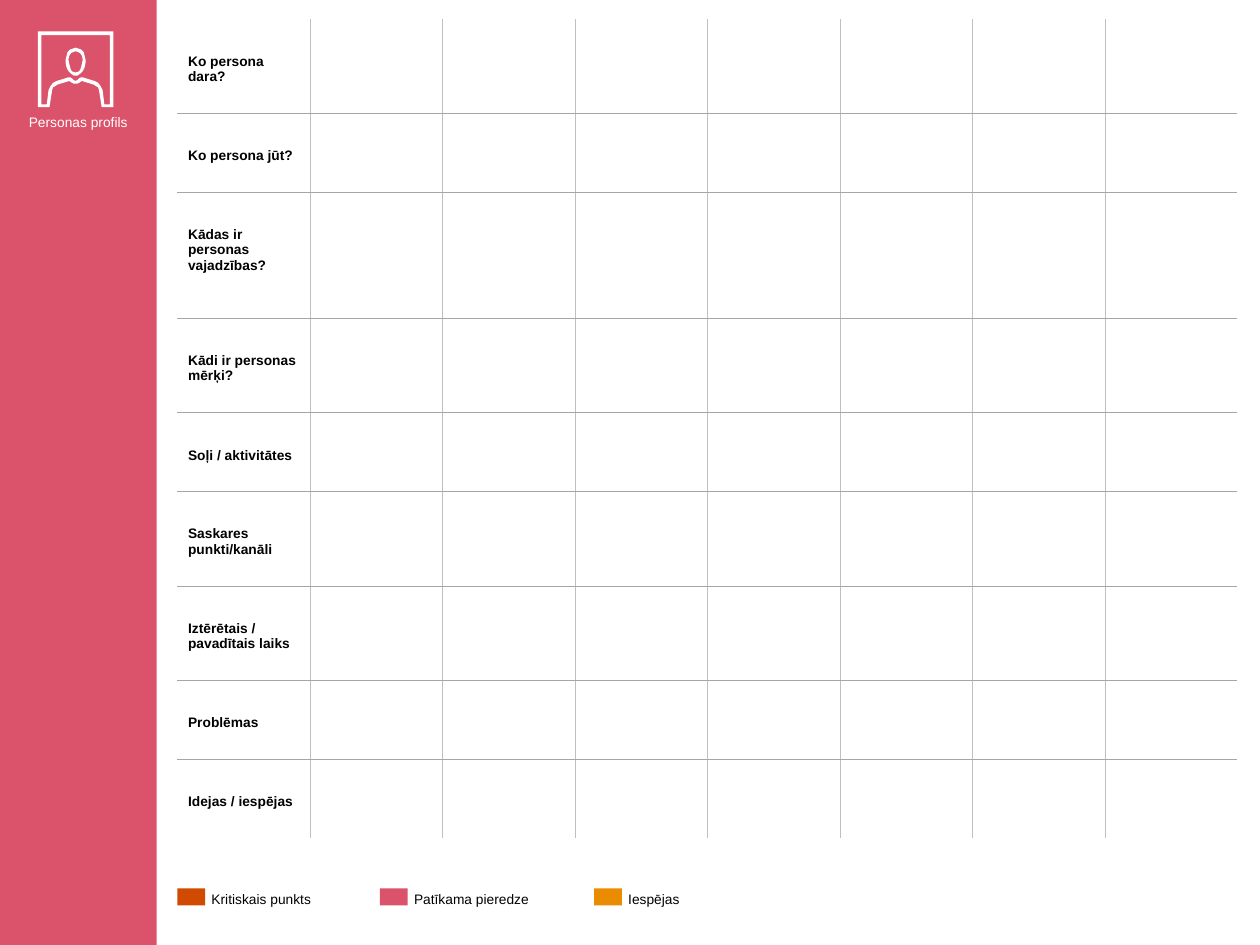
import pptx
import pptx.dml.color
import pptx.enum.shapes
import pptx.enum.text
import pptx.oxml.ns
import pptx.util
from lxml import etree

SLIDE_W, SLIDE_H = 14, 10.5
ROSE, WHITE, BLACK = "DB536A", "FFFFFF", "000000"
COLUMN_RULE, ROW_RULE = "BFBFBF", "A6A6A6"

GRID_LEFT, GRID_TOP = 1.97, 0.21
COLUMNS, COLUMN_W = 8, 1.4725
CELL_PADDING, LINE_H = 0.7, 0.175
# Question and the number of text lines its row makes room for
QUESTIONS = [
    ("Ko persona dara?", 2),
    ("Ko persona jūt?", 1),
    ("Kādas ir personas vajadzības?", 4),
    ("Kādi ir personas mērķi?", 2),
    ("Soļi / aktivitātes", 1),
    ("Saskares punkti/kanāli", 2),
    ("Iztērētais / pavadītais laiks", 2),
    ("Problēmas", 1),
    ("Idejas / iespējas", 1),
]

# Label, colour, left edge, label width
LEGEND = [
    ("Kritiskais punkts", "D04A02", GRID_LEFT, 1.16),
    ("Patīkama pieredze", ROSE, 4.22, 1.28),
    ("Iespējas", "EB8C00", 6.6, 0.62),
]
LEGEND_TOP = SLIDE_H * 0.94

# Left halves of the icon's outlines, in hundredths of an inch
ICON_AXIS = 84
FRAME_OUTER = [(42, 35), (42, 119), (55, 119), (58, 100), (59, 97), (61, 95.5),
               (64, 94), (77, 90), (80, 92), (82, 93), (84, 93)]
FRAME_INNER = [(46, 39), (46, 116), (52, 116), (54, 100), (56, 96), (59, 92.5),
               (63, 90), (76, 86), (78, 86), (80, 87), (82, 89), (84, 90)]
HEAD_OUTER = [(84, 53), (81, 53.5), (78, 55), (75, 58), (73.5, 62), (73, 66), (73, 70),
              (74, 75), (76, 79), (79, 82), (82, 84), (84, 84)]
HEAD_INNER = [(84, 57), (81, 57.5), (79, 59), (77, 62), (76, 66), (77, 71),
              (78, 75), (79, 77.5), (81, 79.5), (83, 80.5), (84, 81)]


def inches(*lengths):
    return [pptx.util.Inches(length) for length in lengths]


def rgb(value):
    return pptx.dml.color.RGBColor.from_string(value)


def write(frame, text, size=11, color=BLACK, bold=False, after=None):
    paragraph = frame.paragraphs[0]
    if after is not None:
        paragraph.space_after = pptx.util.Pt(after)
    run = paragraph.add_run()
    run.text = text
    run.font.name = "Arial"
    run.font.size = pptx.util.Pt(size)
    run.font.bold = bold
    run.font.color.rgb = rgb(color)


def set_margins(target, left, top, right, bottom):
    (target.margin_left, target.margin_top,
     target.margin_right, target.margin_bottom) = inches(left, top, right, bottom)


def paint(shape, color):
    shape.shadow.inherit = False
    shape.fill.solid()
    shape.fill.fore_color.rgb = rgb(color)
    shape.line.fill.background()


def add_block(shapes, left, top, width, height, color):
    block = shapes.add_shape(pptx.enum.shapes.MSO_SHAPE.RECTANGLE,
                             *inches(left, top, width, height))
    paint(block, color)


def add_label(shapes, left, top, width, text, **text_format):
    frame = shapes.add_textbox(*inches(left, top, width, 0.19)).text_frame
    set_margins(frame, 0, 0, 0, 0)
    frame.word_wrap = False
    frame.auto_size = pptx.enum.text.MSO_AUTO_SIZE.SHAPE_TO_FIT_TEXT
    write(frame, text, **text_format)


def add_ring(shapes, *halves):
    """Fill the area between outlines, each mirrored about the icon's axis."""
    outlines = [half + [(2 * ICON_AXIS - x, y) for x, y in reversed(half)] for half in halves]
    builder = shapes.build_freeform(*outlines[0][0], scale=pptx.util.Inches(0.01))
    builder.add_line_segments(outlines[0][1:], close=True)
    for outline in outlines[1:]:
        builder.move_to(*outline[0])
        builder.add_line_segments(outline[1:], close=True)
    paint(builder.convert_to_shape(), WHITE)


def set_border(cell, side, color):
    """Draw a hairline on one side of a cell, or none when color is None."""
    qn = pptx.oxml.ns.qn
    properties = cell._tc.get_or_add_tcPr()
    line = etree.SubElement(properties, qn("a:ln" + side), w=str(pptx.util.Pt(0.25)))
    if color is None:
        etree.SubElement(line, qn("a:noFill"))
    else:
        fill = etree.SubElement(line, qn("a:solidFill"))
        etree.SubElement(fill, qn("a:srgbClr"), val=color)


def add_journey_grid(shapes):
    heights = [CELL_PADDING + LINE_H * lines for _, lines in QUESTIONS]
    table = shapes.add_table(len(QUESTIONS), COLUMNS, *inches(
        GRID_LEFT, GRID_TOP, COLUMNS * COLUMN_W, sum(heights))).table
    table.first_row = table.horz_banding = False
    for column in table.columns:
        column.width = pptx.util.Inches(COLUMN_W)
    last_row, last_column = len(QUESTIONS) - 1, COLUMNS - 1
    for r, (question, _) in enumerate(QUESTIONS):
        table.rows[r].height = pptx.util.Inches(heights[r])
        for c in range(COLUMNS):
            cell = table.cell(r, c)
            set_border(cell, "L", COLUMN_RULE if c > 0 else None)
            set_border(cell, "R", COLUMN_RULE if c < last_column else None)
            set_border(cell, "T", ROW_RULE if r > 0 else None)
            set_border(cell, "B", ROW_RULE if r < last_row else None)
            cell.fill.background()
        heading = table.cell(r, 0)
        set_margins(heading, 0.12, 0.39, 0.08, 0.31)
        write(heading.text_frame, question, bold=True)


def add_legend(shapes):
    for text, color, left, width in LEGEND:
        entry = shapes.add_group_shape().shapes
        add_label(entry, left + 0.38, LEGEND_TOP + 0.03, width, text)
        add_block(entry, left, LEGEND_TOP, 0.31, 0.19, color)


def add_profile(shapes):
    add_label(shapes, 0.32, SLIDE_H * 0.12, 1.11, "Personas profils", color=WHITE, after=6)
    icon = shapes.add_group_shape().shapes
    add_ring(icon, FRAME_OUTER, FRAME_INNER)
    add_ring(icon, HEAD_OUTER, HEAD_INNER)


def main():
    deck = pptx.Presentation()
    deck.slide_width, deck.slide_height = inches(SLIDE_W, SLIDE_H)
    shapes = deck.slides.add_slide(deck.slide_layouts[6]).shapes
    add_block(shapes, 0, 0, 1.74, SLIDE_H, ROSE)
    add_journey_grid(shapes)
    add_legend(shapes)
    add_profile(shapes)
    deck.save("out.pptx")


if __name__ == "__main__":
    main()
